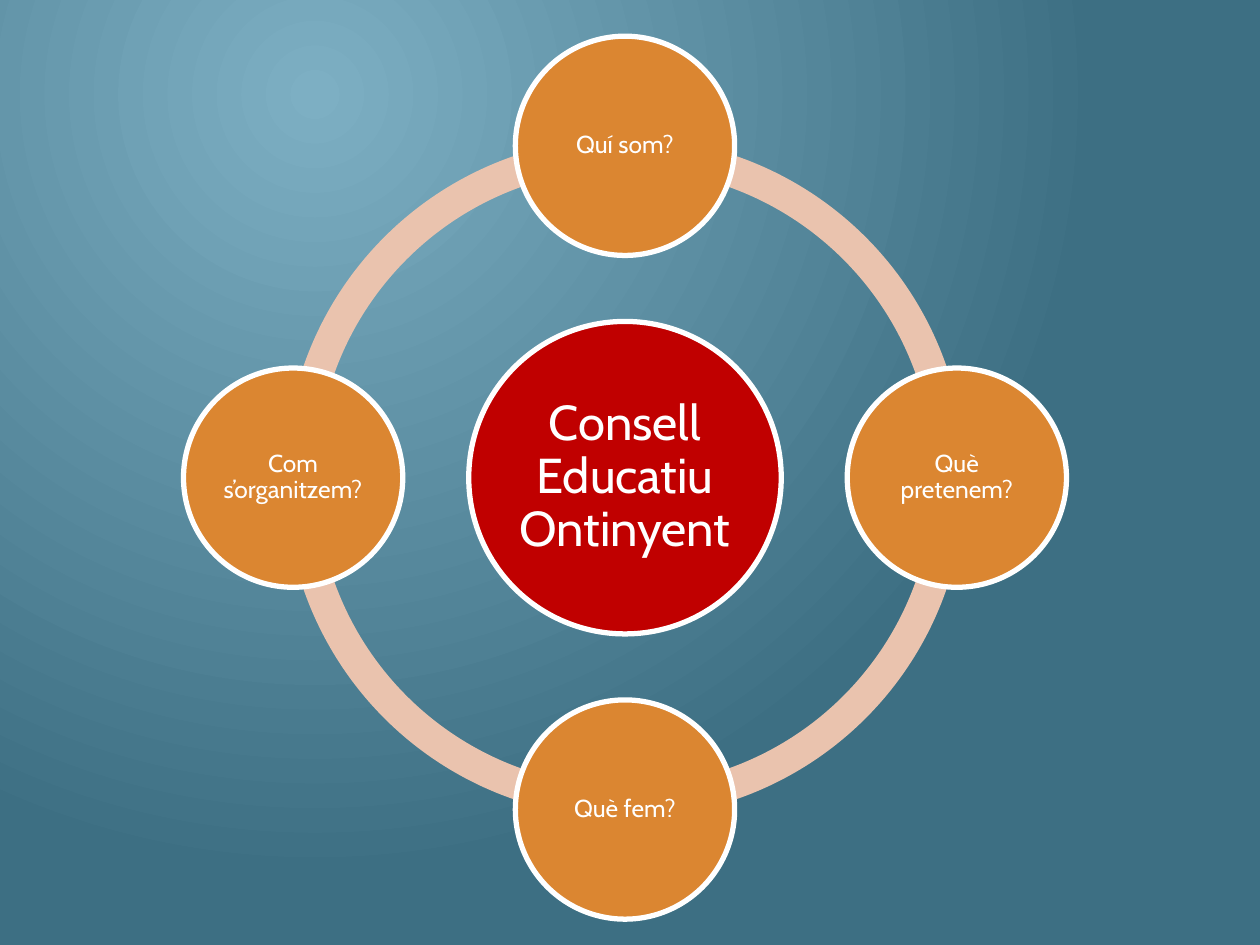
from math import cos, pi, sin

from lxml.etree import SubElement
from pptx import Presentation
from pptx.dml.color import RGBColor
from pptx.enum.shapes import MSO_SHAPE
from pptx.enum.text import MSO_ANCHOR, PP_ALIGN
from pptx.oxml.ns import qn
from pptx.util import Cm, Pt

COLORS = {
    "glow": "7DAFC3",
    "edge": "3D6F83",
    "ring": "EAC3AE",
    "core": "C00000",
    "node": "DB8631",
    "white": "FFFFFF",
}
FONT = "Cabin"
CORE_TEXT = "Consell Educatiu Ontinyent"
NODE_TEXTS = ["Quí som?", "Què pretenem?", "Què fem?", "Com s’organitzem?"]  # clockwise from top

# Sizes in cm
RING_SIZE, CORE_SIZE, NODE_SIZE = 13.72, 6.3, 4.42
RING_THICKNESS = 0.0464


def rgb(name):
    return RGBColor.from_string(COLORS[name])


def set_background(slide):
    """Radial glow centred near the top left."""
    fill = slide.background.fill
    fill.gradient()
    for stop, name in zip(fill.gradient_stops, ("glow", "edge")):
        stop.color.rgb = rgb(name)
    grad = slide._element.find(".//" + qn("a:gradFill"))
    grad.remove(grad.find(qn("a:lin")))
    path = SubElement(grad, qn("a:path"), {"path": "circle"})
    SubElement(path, qn("a:fillToRect"),
               {"l": "50000", "t": "20000", "r": "100000", "b": "100000"})


def add_centred(shapes, kind, cx, cy, size, color):
    sp = shapes.add_shape(kind, Cm(cx - size / 2), Cm(cy - size / 2), Cm(size), Cm(size))
    sp.shadow.inherit = False
    sp.fill.solid()
    sp.fill.fore_color.rgb = rgb(color)
    return sp


def add_circle(shapes, cx, cy, size, color, text, font_size, inset):
    sp = add_centred(shapes, MSO_SHAPE.OVAL, cx, cy, size, color)
    sp.line.color.rgb = rgb("white")
    sp.line.width = Pt(3)
    tf = sp.text_frame
    tf.word_wrap = True
    tf.vertical_anchor = MSO_ANCHOR.MIDDLE
    tf.margin_left = tf.margin_right = tf.margin_top = tf.margin_bottom = Cm(inset)
    p = tf.paragraphs[0]
    p.text = text
    p.alignment = PP_ALIGN.CENTER
    p.line_spacing = 0.9
    p.font.name = FONT
    p.font.size = Pt(font_size)
    p.font.color.rgb = rgb("white")


def add_radial_cycle(slide, left, top, size):
    """Core circle with nodes on a ring, filling a square box."""
    shapes = slide.shapes.add_group_shape().shapes
    cx, cy = left + size / 2, top + size / 2
    orbit = (size - NODE_SIZE) / 2

    # Ring, one quarter arc at a time; angles in units of 100000/60000 degree
    for start in (108, 54, 0, 162):
        arc = add_centred(shapes, MSO_SHAPE.BLOCK_ARC, cx, cy, RING_SIZE, "ring")
        arc.line.fill.background()
        arc.adjustments[0] = start
        arc.adjustments[1] = (start + 54) % 216
        arc.adjustments[2] = RING_THICKNESS

    # Core
    add_circle(shapes, cx, cy, CORE_SIZE, "core", CORE_TEXT, 28, 0.1)

    # Nodes
    for i, text in enumerate(NODE_TEXTS):
        angle = 2 * pi * i / len(NODE_TEXTS)
        add_circle(shapes, cx + orbit * sin(angle), cy - orbit * cos(angle),
                   NODE_SIZE, "node", text, 14, 0.05)


def main():
    prs = Presentation()
    prs.slide_width, prs.slide_height = Cm(25.4), Cm(19.05)
    slide = prs.slides.add_slide(prs.slide_layouts[6])
    set_background(slide)
    add_radial_cycle(slide, left=3.7, top=0.73, size=17.8)
    prs.save("out.pptx")


if __name__ == "__main__":
    main()
